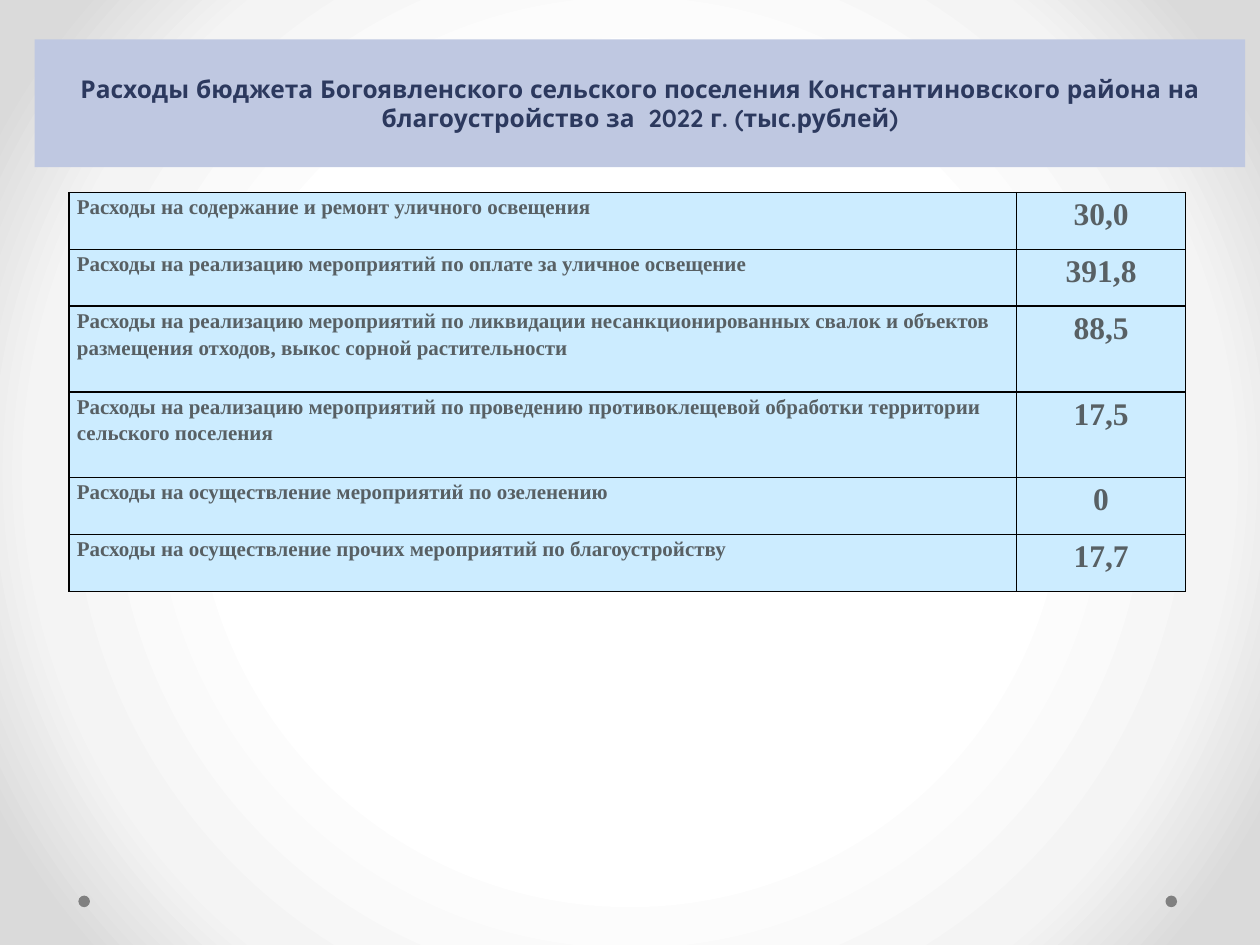
from dataclasses import dataclass

from lxml.etree import SubElement
from pptx import Presentation
from pptx.dml.color import RGBColor
from pptx.enum.shapes import MSO_SHAPE
from pptx.enum.text import MSO_ANCHOR, PP_ALIGN
from pptx.oxml import parse_xml
from pptx.oxml.ns import nsdecls, qn
from pptx.util import Pt


@dataclass(frozen=True)
class Theme:
    band: str = "BFC8E1"
    title: str = "2C395E"
    cell: str = "CCECFF"
    text: str = "586064"
    border: str = "000000"
    dot: str = "808080"
    glow: tuple = ((0, "FFFFFF"), (50, "FFFFFF"), (76, "F4F4F4"), (92, "DADADA"), (100, "DADADA"))
    title_font: str = "Quicksand"
    table_font: str = "Times New Roman"
    title_size: int = 14
    label_size: int = 12
    value_size: int = 18


class Deck:
    def __init__(self, prs, theme):
        self.theme = theme
        self.s = prs.slides.add_slide(prs.slide_layouts[6])

    def background(self):
        stops = "".join(
            f'<a:gs pos="{pos * 1000}"><a:srgbClr val="{color}"/></a:gs>'
            for pos, color in self.theme.glow)
        bg = parse_xml(
            f'<p:bg {nsdecls("p", "a")}><p:bgPr><a:gradFill rotWithShape="1">'
            f'<a:gsLst>{stops}</a:gsLst><a:path path="circle">'
            '<a:fillToRect l="50000" t="50000" r="50000" b="50000"/></a:path>'
            '</a:gradFill><a:effectLst/></p:bgPr></p:bg>')
        self.s.element.find(qn("p:cSld")).insert(0, bg)

    def shape(self, kind, x, y, w, h, color):
        sp = self.s.shapes.add_shape(kind, Pt(x), Pt(y), Pt(w), Pt(h))
        sp.shadow.inherit = False
        sp.fill.solid()
        sp.fill.fore_color.rgb = RGBColor.from_string(color)
        sp.line.fill.background()
        return sp

    def text(self, tf, text, font, size, color, align):
        p = tf.paragraphs[0]
        p.alignment = align
        r = p.add_run()
        r.text = text
        r.font.name, r.font.size, r.font.bold = font, Pt(size), True
        r.font.color.rgb = RGBColor.from_string(color)
        return p

    def title(self, text, x, y, w, h):
        t = self.theme
        tf = self.shape(MSO_SHAPE.RECTANGLE, x, y, w, h, t.band).text_frame
        tf.word_wrap = True
        tf.vertical_anchor = MSO_ANCHOR.MIDDLE
        self.text(tf, text, t.title_font, t.title_size, t.title, PP_ALIGN.CENTER)

    def dot(self, x, y, d):
        self.shape(MSO_SHAPE.OVAL, x, y, d, d, self.theme.dot)

    def borders(self, cell):
        pr = cell._tc.get_or_add_tcPr()
        for i, side in enumerate(("lnL", "lnR", "lnT", "lnB")):
            ln = pr.makeelement(qn(f"a:{side}"), {"w": str(Pt(1))})
            fill = SubElement(ln, qn("a:solidFill"))
            SubElement(fill, qn("a:srgbClr"), val=self.theme.border)
            pr.insert(i, ln)

    def table(self, rows, x, y, widths, heights):
        t = self.theme
        styles = ((t.label_size, PP_ALIGN.LEFT), (t.value_size, PP_ALIGN.CENTER))
        tbl = self.s.shapes.add_table(len(rows), len(widths), Pt(x), Pt(y),
                                      Pt(sum(widths)), Pt(sum(heights))).table
        tbl.first_row = tbl.horz_banding = False
        for col, w in zip(tbl.columns, widths):
            col.width = Pt(w)
        for row, h, values in zip(tbl.rows, heights, rows):
            row.height = Pt(h)
            for cell, value, (size, align) in zip(row.cells, values, styles):
                cell.margin_left = cell.margin_right = Pt(4.5)
                cell.margin_top = cell.margin_bottom = 0
                cell.fill.solid()
                cell.fill.fore_color.rgb = RGBColor.from_string(t.cell)
                p = self.text(cell.text_frame, value, t.table_font, size, t.text, align)
                p.line_spacing = 1.15
                self.borders(cell)


EXPENSES = (
    ("Расходы на содержание и ремонт уличного освещения", "30,0"),
    ("Расходы на реализацию мероприятий по оплате за уличное освещение", "391,8"),
    ("Расходы на реализацию мероприятий по ликвидации несанкционированных свалок "
     "и объектов размещения отходов, выкос сорной растительности", "88,5"),
    ("Расходы на реализацию мероприятий по проведению противоклещевой обработки "
     "территории сельского поселения", "17,5"),
    ("Расходы на осуществление мероприятий по озеленению", "0"),
    ("Расходы на осуществление прочих мероприятий по благоустройству", "17,7"),
)
ONE_LINE, TWO_LINES = 32.5, 49


def main():
    prs = Presentation()
    prs.slide_width, prs.slide_height = Pt(720), Pt(540)
    deck = Deck(prs, Theme())
    deck.background()
    for x in (666, 44.8):
        deck.dot(x, 511.8, 6.6)
    deck.title("Расходы бюджета Богоявленского сельского поселения Константиновского "
               "района на благоустройство за  2022 г. (тыс.рублей)", 19.8, 22.5, 691.7, 73)
    heights = [TWO_LINES if len(label) > 80 else ONE_LINE for label, _ in EXPENSES]
    deck.table(EXPENSES, 39.5, 110, (541.5, 96.5), heights)
    prs.save("out.pptx")


if __name__ == "__main__":
    main()
